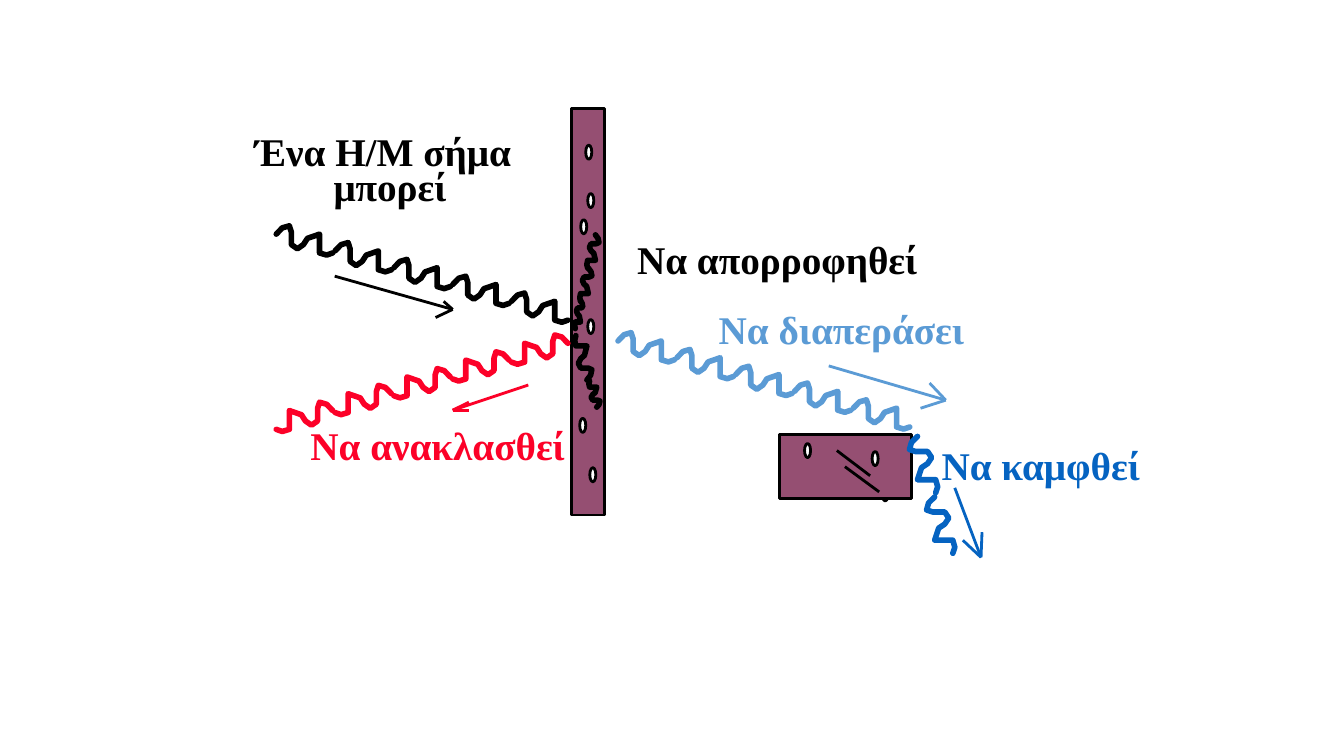
from lxml import etree
from pptx import Presentation
from pptx import util as u
from pptx.dml import color
from pptx.enum import shapes, text
from pptx.oxml import ns

COLORS = {"ink": "000000", "wall": "954F72", "pore": "FFFFFF",
          "reflect": "FC0128", "pass": "5B9BD5", "bend": "0563C1"}
RIPPLE_WIDTH, RIPPLE_HEIGHT = 0.28, 0.56
RIPPLE = [(0.08, 0), (0.02, 0.06), (0, 0.13), (0.06, 0.15), (0.12, 0.15), (0.18, 0.15),
          (0.22, 0.21), (0.18, 0.27), (0.12, 0.31), (0.1, 0.37), (0.08, 0.43), (0.14, 0.43),
          (0.2, 0.43), (0.26, 0.43), (0.28, 0.5), (0.26, 0.56)]
TRAIN_COUNT, STEP_X, STEP_Y = 5, 7 / 12, 1 / 6


class SignalSlide:
    """Draws waves, walls, arrows and labels on one slide."""

    def __init__(self, deck):
        self.page = deck.slides.add_slide(deck.slide_layouts[6])
        self.font = "Times New Roman"
        self.size = u.Pt(28)

    def rgb(self, name):
        return color.RGBColor.from_string(COLORS[name])

    def stroke(self, line, name, width=2):
        line.color.rgb = self.rgb(name)
        line.width = u.Pt(width)

    def block(self, kind, left, top, width, height, fill):
        block = self.page.shapes.add_shape(
            kind, u.Inches(left), u.Inches(top), u.Inches(width), u.Inches(height))
        block.shadow.inherit = False
        block.fill.solid()
        block.fill.fore_color.rgb = self.rgb(fill)
        self.stroke(block.line, "ink")

    def wall(self, left, top, width, height):
        self.block(shapes.MSO_SHAPE.RECTANGLE, left, top, width, height, "wall")

    def pores(self, *corners):
        for left, top in corners:
            self.block(shapes.MSO_SHAPE.OVAL, left, top, 0.06, 0.14, "pore")

    def ripple(self, left, top, width, height, name, flip_x=False, flip_y=False, sideways=False):
        points = []
        for x, y in RIPPLE:
            across, down = x / RIPPLE_WIDTH, y / RIPPLE_HEIGHT
            if sideways:
                across, down = down, across
            across = 1 - across if flip_x else across
            down = 1 - down if flip_y else down
            points.append((u.Inches(left + across * width), u.Inches(top + down * height)))
        builder = self.page.shapes.build_freeform(*points[0])
        builder.add_line_segments(points[1:], close=False)
        wave = builder.convert_to_shape()
        wave.shadow.inherit = False
        wave.fill.background()
        self.stroke(wave.line, name, 4)
        outline = wave.line._get_or_add_ln()
        outline.set("cap", "rnd")
        etree.SubElement(outline, ns.qn("a:round"))

    def train(self, left, top, name, rising=False):
        for index in range(TRAIN_COUNT):
            drop = -STEP_Y if rising else STEP_Y
            self.ripple(left + index * STEP_X, top + index * drop, 0.56, 0.29, name,
                        flip_x=rising, sideways=True)

    def line(self, start, end, name):
        line = self.page.shapes.add_connector(
            shapes.MSO_CONNECTOR.STRAIGHT, *map(u.Inches, start + end))
        self.stroke(line.line, name)
        etree.SubElement(line._element.spPr, ns.qn("a:effectLst"))

    def arrow(self, tail, tip, barbs, name):
        self.line(tail, tip, name)
        for barb in barbs:
            self.line(tip, barb, name)

    def label(self, left, top, width, height, rows, name, spacing=None):
        box = self.page.shapes.add_textbox(
            u.Inches(left), u.Inches(top), u.Inches(width), u.Inches(height))
        frame = box.text_frame
        frame.word_wrap = False
        frame.auto_size = text.MSO_AUTO_SIZE.SHAPE_TO_FIT_TEXT
        for index, (words, indent) in enumerate(rows):
            para = frame.add_paragraph() if index else frame.paragraphs[0]
            para.line_spacing = spacing
            if indent:
                para._p.get_or_add_pPr().set("marL", str(u.Inches(indent)))
            span = para.add_run()
            span.text = words
            span.font.name = self.font
            span.font.size = self.size
            span.font.bold = True
            span.font.color.rgb = self.rgb(name)


def main():
    deck = Presentation()
    deck.slide_width, deck.slide_height = u.Inches(13.33), u.Inches(7.5)
    slide = SignalSlide(deck)

    slide.wall(5.67, 1.08, 0.33, 4.03)
    slide.pores((5.75, 4.15), (5.83, 3.17), (5.85, 4.64),
                (5.76, 2.18), (5.83, 1.92), (5.81, 1.44))
    slide.train(2.74, 2.24, "ink")
    slide.train(2.74, 3.99, "reflect", rising=True)
    for left, top, width, height, flip_y in [
            (5.7, 2.98, 0.08, 0.28, False), (5.75, 2.66, 0.12, 0.33, False),
            (5.82, 2.33, 0.12, 0.33, False), (5.7, 3.33, 0.17, 0.44, True),
            (5.84, 3.78, 0.11, 0.26, True)]:
        slide.ripple(left, top, width, height, "ink", flip_x=True, flip_y=flip_y)

    slide.label(2.43, 1.32, 2.74, 0.8, [("Ένα Η/Μ σήμα", 0), ("μπορεί", 0.78)], "ink", 0.75)
    slide.label(6.22, 2.29, 3.02, 0.57, [("Να απορροφηθεί", 0)], "ink")
    slide.label(2.98, 4.13, 2.76, 0.57, [("Να ανακλασθεί", 0)], "reflect")
    slide.arrow((3.32, 2.74), (4.49, 3.07), [(4.4, 2.99), (4.32, 3.15)], "ink")
    slide.arrow((5.24, 3.82), (4.49, 4.07), [(4.65, 3.99), (4.65, 4.07)], "reflect")

    slide.ripple(9.19, 4.93, 0.28, 0.56, "bend")
    slide.pores((8.75, 4.83))
    slide.train(6.13, 3.3, "pass")
    slide.label(7.03, 2.98, 2.64, 0.57, [("Να διαπεράσει", 0)], "pass")
    slide.arrow((8.22, 3.63), (9.38, 3.97), [(9.22, 3.8), (9.13, 4.05)], "pass")

    slide.wall(7.73, 4.31, 1.31, 0.64)
    slide.ripple(9.02, 4.33, 0.28, 0.56, "bend")
    slide.label(9.24, 4.33, 2.18, 0.57, [("Να καμφθεί", 0)], "bend")
    slide.arrow((9.47, 4.84), (9.73, 5.53), [(9.74, 5.28), (9.55, 5.36)], "bend")
    slide.pores((8.65, 4.48), (7.98, 4.4))
    slide.line((8.3, 4.47), (8.63, 4.72), "ink")
    slide.line((8.38, 4.63), (8.72, 4.88), "ink")
    deck.save("out.pptx")


if __name__ == "__main__":
    main()
